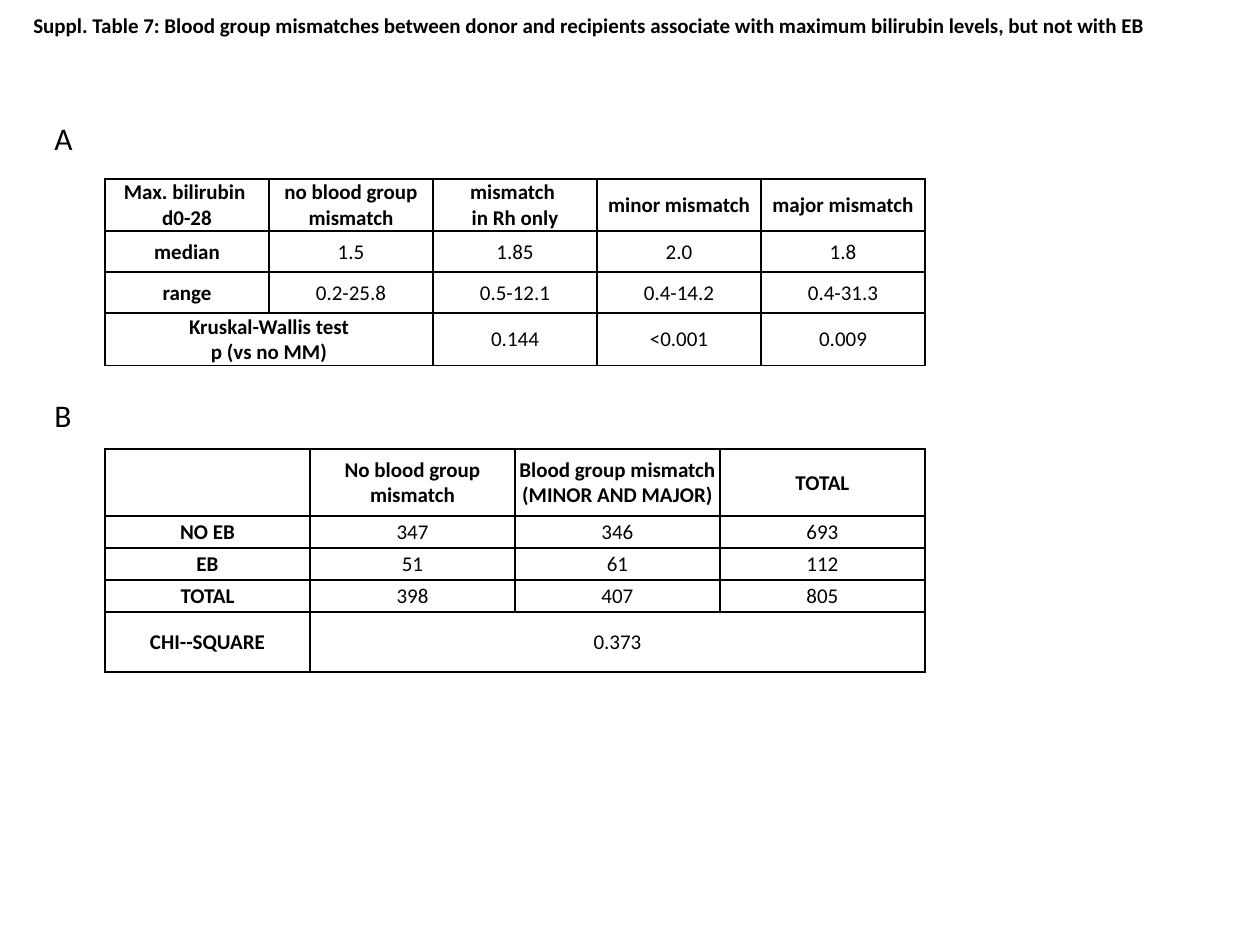
from dataclasses import dataclass

import lxml.etree
import pptx
import pptx.dml.color
import pptx.enum.text
import pptx.oxml.ns
import pptx.util

PX_PER_INCH = 126
FONT = "Calibri"
BLACK = pptx.dml.color.RGBColor(0x00, 0x00, 0x00)
BORDER_PT = 1
CENTER = pptx.enum.text.PP_ALIGN.CENTER
LEFT = pptx.enum.text.PP_ALIGN.LEFT


@dataclass
class Label:
    text: str
    x: int
    y: int
    width: int
    height: int
    size: int
    bold: bool = False
    wrap: bool = True


@dataclass
class Grid:
    """A table; None marks a cell that the cell to its left spans over."""
    x: int
    y: int
    col_width: int
    row_heights: list[int]
    rows: list[list[str | None]]


LABELS = [
    Label("Suppl. Table 7: Blood group mismatches between donor and recipients "
          "associate with maximum bilirubin levels, but not with EB",
          21, 6, 1187, 38, 12, bold=True),
    Label("A", 42, 113, 44, 50, 18, wrap=False),
    Label("B", 42, 390, 44, 50, 18),
]

BILIRUBIN = Grid(105, 179, 164, [52, 41, 41, 52], [
    ["Max. bilirubin \nd0-28", "no blood group mismatch", "mismatch \nin Rh only",
     "minor mismatch", "major mismatch"],
    ["median", "1.5", "1.85", "2.0", "1.8"],
    ["range", "0.2-25.8", "0.5-12.1", "0.4-14.2", "0.4-31.3"],
    ["Kruskal-Wallis test\np (vs no MM)", None, "0.144", "<0.001", "0.009"],
])

EB_COUNTS = Grid(105, 449, 205, [67, 32, 32, 32, 60], [
    ["", "No blood group mismatch", "Blood group mismatch (MINOR AND MAJOR)", "TOTAL"],
    ["NO EB", "347", "346", "693"],
    ["EB", "51", "61", "112"],
    ["TOTAL", "398", "407", "805"],
    ["CHI--SQUARE", "0.373", None, None],
])


def px(n: int) -> int:
    return round(n * pptx.util.Inches(1) / PX_PER_INCH)


def write(tf, text: str, *, size: int = 12, bold: bool = False, align=LEFT) -> None:
    """Fill a text frame, one paragraph for each line of text."""
    for i, line in enumerate(text.split("\n")):
        p = tf.add_paragraph() if i else tf.paragraphs[0]
        p.alignment = align
        r = p.add_run()
        r.text = line
        r.font.name = FONT
        r.font.size = pptx.util.Pt(size)
        r.font.bold = bold
        r.font.color.rgb = BLACK


def add_label(s, label: Label) -> None:
    sp = s.shapes.add_textbox(px(label.x), px(label.y), px(label.width), px(label.height))
    tf = sp.text_frame
    tf.word_wrap = label.wrap
    tf.auto_size = pptx.enum.text.MSO_AUTO_SIZE.SHAPE_TO_FIT_TEXT
    write(tf, label.text, size=label.size, bold=label.bold)


def style_cell(cell) -> None:
    """Clear the fill, tighten the margins and draw all four borders."""
    cell.fill.background()
    cell.margin_left = cell.margin_right = cell.margin_top = px(1)
    cell.margin_bottom = 0
    cell.vertical_anchor = pptx.enum.text.MSO_ANCHOR.MIDDLE
    tc_pr = cell._tc.get_or_add_tcPr()
    qn = pptx.oxml.ns.qn
    for i, side in enumerate(("a:lnL", "a:lnR", "a:lnT", "a:lnB")):
        ln = lxml.etree.Element(qn(side), w=str(pptx.util.Pt(BORDER_PT)))
        fill = lxml.etree.SubElement(ln, qn("a:solidFill"))
        lxml.etree.SubElement(fill, qn("a:srgbClr"), val=str(BLACK))
        tc_pr.insert(i, ln)


def add_grid(s, grid: Grid) -> None:
    n_cols = len(grid.rows[0])
    table = s.shapes.add_table(
        len(grid.rows), n_cols, px(grid.x), px(grid.y),
        px(grid.col_width * n_cols), px(sum(grid.row_heights))).table
    table.first_row = table.horz_banding = False
    for col in table.columns:
        col.width = px(grid.col_width)
    for row, height in zip(table.rows, grid.row_heights):
        row.height = px(height)
    for i, texts in enumerate(grid.rows):
        for j, text in enumerate(texts):
            cell = table.cell(i, j)
            style_cell(cell)
            if text is None:
                continue
            write(cell.text_frame, text, bold=i == 0 or j == 0, align=CENTER)
            end = j
            while end + 1 < n_cols and texts[end + 1] is None:
                end += 1
            if end > j:
                cell.merge(table.cell(i, end))


def main() -> None:
    prs = pptx.Presentation()
    prs.slide_width = pptx.util.Inches(10)
    prs.slide_height = pptx.util.Inches(7.5)
    s = prs.slides.add_slide(prs.slide_layouts[6])
    for grid in (BILIRUBIN, EB_COUNTS):
        add_grid(s, grid)
    for label in LABELS:
        add_label(s, label)
    prs.save("out.pptx")


if __name__ == "__main__":
    main()
